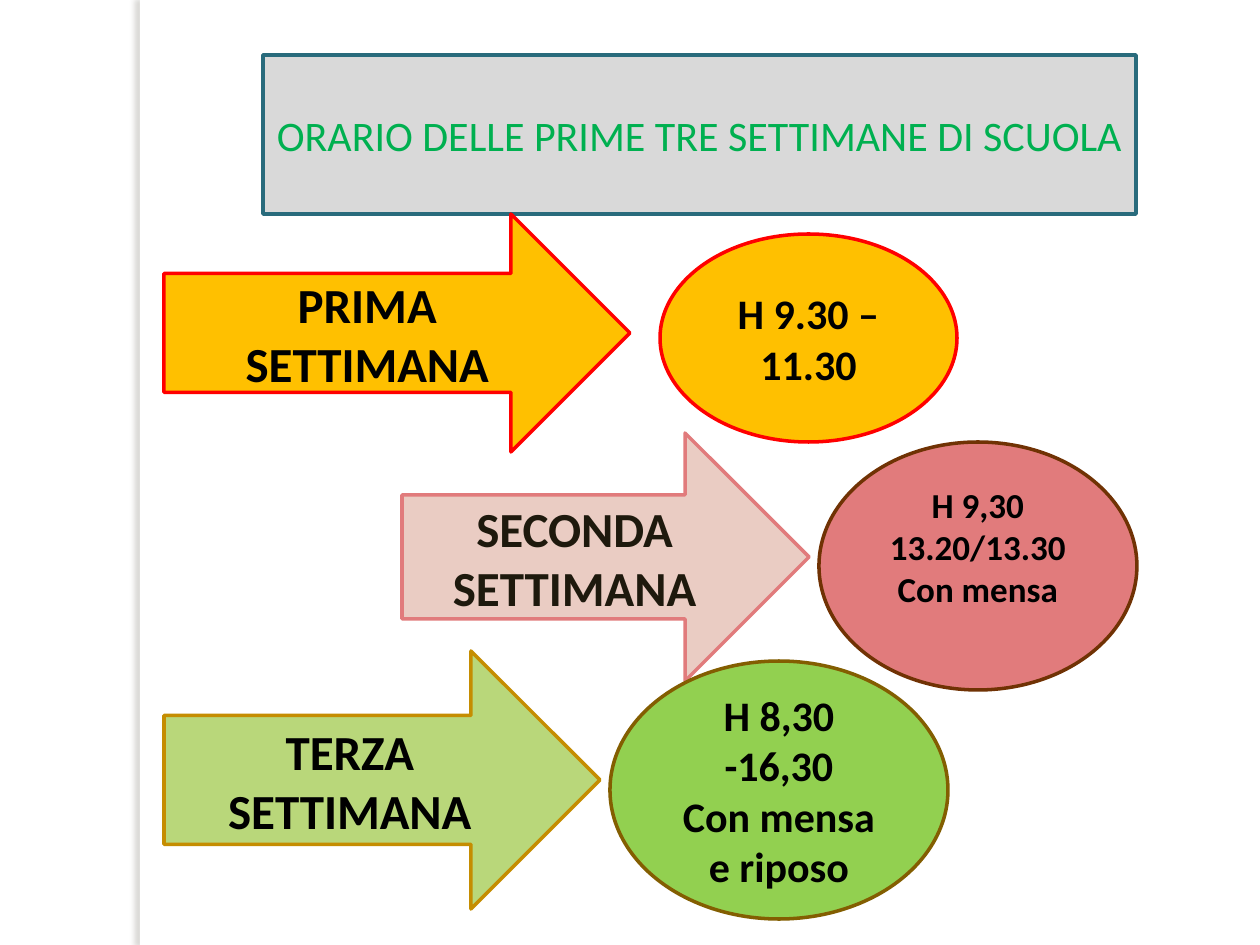
"""Build the slide with the school timetable of the first three weeks."""
from dataclasses import dataclass

from lxml import etree
from pptx import Presentation
from pptx.dml.color import RGBColor
from pptx.enum.shapes import MSO_SHAPE as Shape
from pptx.enum.text import MSO_ANCHOR as Anchor, PP_ALIGN as Align
from pptx.oxml.ns import qn
from pptx.util import Emu, Pt

TITLE = "ORARIO DELLE PRIME TRE SETTIMANE DI SCUOLA"
TITLE_BOX = (263, 55, 873, 159)
STRIP_BOX = (140, 0, 10, 945)

ARROWS = [
    dict(box=(164, 214, 466, 238), lines=["PRIMA SETTIMANA"], fill="FFC000", line="FF0000"),
    dict(box=(402, 433, 407, 248), lines=["SECONDA SETTIMANA"], fill="EACCC3", line="E17B7C",
         color="1E190D"),
    dict(box=(164, 651, 436, 258), lines=["TERZA SETTIMANA"], fill="B9D77A", line="C58D01"),
]
HOURS = [
    dict(box=(660, 234, 297, 208), lines=["H 9.30 – 11.30"], fill="FFC000", line="FF0000"),
    dict(box=(819, 442, 318, 248), lines=["H 9,30", "13.20/13.30", "Con mensa"],
         fill="E17B7C", line="703204", size=20, bottom=45),
    dict(box=(610, 661, 338, 258), lines=["H 8,30 -16,30", "Con mensa e riposo"],
         fill="92D050", line="835E01"),
]


@dataclass(frozen=True)
class Theme:
    font: str = "Calibri"
    text: str = "000000"
    title: str = "00B050"
    title_fill: str = "D9D9D9"
    title_line: str = "296B7C"
    strip: str = "FFFFFF"
    shadow: str = "736F63"
    title_size: int = 24
    arrow_size: int = 28
    hours_size: int = 24
    line_width: int = 2


THEME = Theme()


def px(value):
    return Emu(round(value * 914400 / 126))


def place(shape, box):
    shape.left, shape.top, shape.width, shape.height = map(px, box)


def paint(shape, fill, line=None):
    shape.fill.solid()
    shape.fill.fore_color.rgb = RGBColor.from_string(fill)
    if line:
        shape.line.color.rgb = RGBColor.from_string(line)
        shape.line.width = Pt(THEME.line_width)
    else:
        shape.line.fill.background()


def write(shape, lines, size, color=THEME.text, bold=True, bottom=6):
    frame = shape.text_frame
    frame.word_wrap = True
    frame.vertical_anchor = Anchor.MIDDLE
    frame.margin_bottom = px(bottom)
    frame.text = "\n".join(lines)
    for paragraph in frame.paragraphs:
        paragraph.alignment = Align.CENTER
        for run in paragraph.runs:
            run.font.name = THEME.font
            run.font.size = Pt(size)
            run.font.bold = bold
            run.font.color.rgb = RGBColor.from_string(color)


def add_shape(slide, kind, box, fill, line=None):
    shape = slide.shapes.add_shape(kind, *map(px, box))
    shape.shadow.inherit = False
    paint(shape, fill, line)
    return shape


def add_label(slide, kind, box, lines, fill, line, **text_format):
    write(add_shape(slide, kind, box, fill, line), lines, **text_format)


def cast_shadow_left(shape):
    effects = shape._element.spPr.find(qn("a:effectLst"))
    shadow = etree.SubElement(effects, qn("a:outerShdw"), blurRad=str(Pt(3)), dist=str(Pt(3)),
                              dir=str(180 * 60000), algn="ctr", rotWithShape="0")
    color = etree.SubElement(shadow, qn("a:srgbClr"), val=THEME.shadow)
    etree.SubElement(color, qn("a:alpha"), val="25000")


def main():
    presentation = Presentation()
    presentation.slide_width, presentation.slide_height = px(1260), px(945)
    slide = presentation.slides.add_slide(presentation.slide_layouts[5])

    title = slide.shapes.title
    place(title, TITLE_BOX)
    paint(title, THEME.title_fill, THEME.title_line)
    write(title, [TITLE], THEME.title_size, color=THEME.title, bold=False)

    cast_shadow_left(add_shape(slide, Shape.RECTANGLE, STRIP_BOX, THEME.strip))
    for arrow in ARROWS:
        add_label(slide, Shape.RIGHT_ARROW, **{"size": THEME.arrow_size, **arrow})
    for hours in HOURS:
        add_label(slide, Shape.OVAL, **{"size": THEME.hours_size, **hours})

    presentation.save("out.pptx")


if __name__ == "__main__":
    main()
